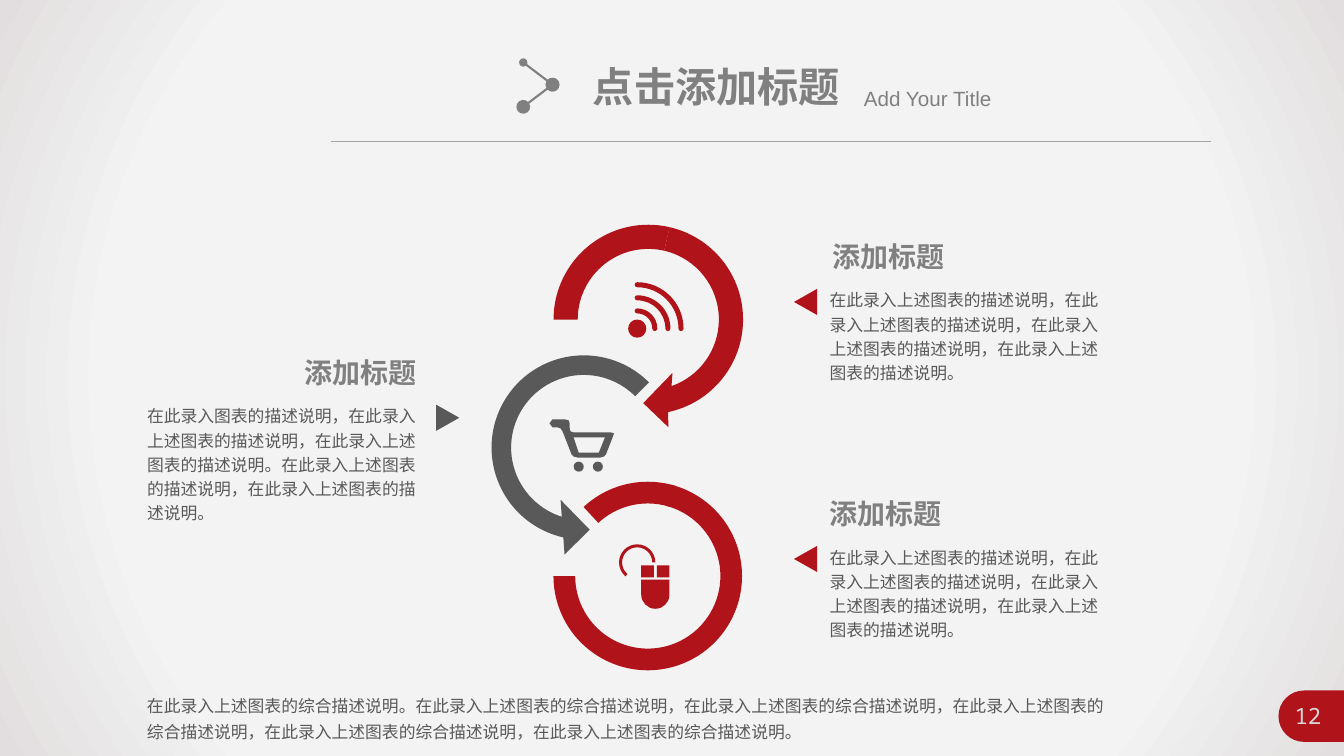
import math

from lxml import etree
from pptx import Presentation
from pptx.dml.color import RGBColor
from pptx.enum.shapes import MSO_CONNECTOR, MSO_SHAPE
from pptx.enum.text import MSO_ANCHOR, MSO_AUTO_SIZE, PP_ALIGN
from pptx.oxml import parse_xml
from pptx.oxml.ns import nsdecls, qn
from pptx.util import Inches, Pt

LEFT, CENTER, RIGHT = PP_ALIGN.LEFT, PP_ALIGN.CENTER, PP_ALIGN.RIGHT
TOP = MSO_ANCHOR.TOP
FIT, FIXED = MSO_AUTO_SIZE.SHAPE_TO_FIT_TEXT, MSO_AUTO_SIZE.NONE
STRAIGHT = MSO_CONNECTOR.STRAIGHT
RECT, TRIANGLE, OVAL = MSO_SHAPE.RECTANGLE, MSO_SHAPE.ISOSCELES_TRIANGLE, MSO_SHAPE.OVAL
BLOCK_ARC, LEFT_ARROW = MSO_SHAPE.BLOCK_ARC, MSO_SHAPE.LEFT_CIRCULAR_ARROW

W, H = 13.33, 7.5
COLORS = {"red": "B01319", "dark": "595959", "title": "808080", "rule": "A6A6A6",
          "number": "D9D9D9", "back": "F5F5F5", "middle": "F3F3F3", "edge": "E2DEDF"}
CJK, LATIN, MONO = "Noto Sans CJK SC", "Arial", "Noto Sans Mono"

HEADING = "添加标题"
RIGHT_BODY = "在此录入上述图表的描述说明，" * 3 + "在此录入上述图表的描述说明。"
LEFT_BODY = ("在此录入图表的描述说明，在此录入上述图表的描述说明，在此录入上述图表的描述说明。"
             "在此录入上述图表的描述说明，在此录入上述图表的描述说明。")
SUMMARY = "在此录入上述图表的综合描述说明。" + "在此录入上述图表的综合描述说明，" * 4 + "在此录入上述图表的综合描述说明。"


def rgb(name):
    return RGBColor.from_string(COLORS[name])


def paint(sp, color):
    sp.shadow.inherit = False
    sp.fill.solid()
    sp.fill.fore_color.rgb = rgb(color)
    sp.line.fill.background()
    return sp


def shape(s, kind, box, color, rotation=0, adjust=()):
    sp = paint(s.shapes.add_shape(kind, *map(Inches, box)), color)
    sp.rotation = rotation
    for i, value in enumerate(adjust):
        sp.adjustments[i] = value
    return sp


def corners(*points):
    return [(pt,) for pt in points]


def arc(cx, cy, radius, start, end):
    """Curved segments, split at the quadrants; degrees run clockwise from the right."""
    low, high = sorted((start, end))
    inner = [a for a in range(0, 541, 90) if low < a < high]
    stops = sorted([low, *inner, high], reverse=start > end)

    def at(angle, pull=0.0):
        c, n = math.cos(math.radians(angle)), math.sin(math.radians(angle))
        return cx + radius * (c - pull * n), cy + radius * (n + pull * c)

    segments = [(at(start),)]
    for a, b in zip(stops, stops[1:]):
        k = 4 / 3 * math.tan(math.radians(b - a) / 4)
        segments.append((at(a, k), at(b, -k), at(b)))
    return segments


def outline(s, color, *contours):
    """Fill closed contours of segments: one point is a line, three are a Bezier curve."""
    builder = None
    for contour in contours:
        (start,), *rest = contour
        x, y = map(Inches, start)
        if builder:
            builder.move_to(x, y)
        else:
            builder = s.shapes.build_freeform(x, y, scale=1.0)
        builder.add_line_segments([(Inches(px), Inches(py)) for seg in rest for px, py in seg], close=True)
    sp = paint(builder.convert_to_shape(), color)
    nodes = iter(sp._element.findall(".//" + qn("a:lnTo")))
    for seg in (seg for contour in contours for seg in contour[1:]):
        used = [next(nodes) for _ in seg]
        if len(seg) == 3:
            curve = etree.Element(qn("a:cubicBezTo"))
            used[0].addprevious(curve)
            for node in used:
                curve.append(node[0])
                node.getparent().remove(node)
    return sp


def line(s, start, end, color, width, head=None, tail=None):
    c = s.shapes.add_connector(STRAIGHT, *map(Inches, start + end))
    c.line.color.rgb = rgb(color)
    c.line.width = Pt(width)
    ln = c.line._get_or_add_ln()
    for tag, size in (("a:headEnd", head), ("a:tailEnd", tail)):
        if size:
            etree.SubElement(ln, qn(tag), type="oval", w=size, len=size)
    etree.SubElement(c._element.spPr, qn("a:effectLst"))


def write(sp, text, size, color, font=CJK, bold=False, align=LEFT, wrap=True, spacing=None, fit=FIT):
    tf = sp.text_frame
    tf.word_wrap = wrap
    tf.auto_size = fit
    tf.vertical_anchor = TOP
    p = tf.paragraphs[0]
    p.alignment = align
    if spacing:
        p.line_spacing = spacing
    r = p.add_run()
    r.text = text
    r.font.size, r.font.bold, r.font.name = Pt(size), bold, font
    r.font.color.rgb = rgb(color)
    etree.SubElement(r._r.get_or_add_rPr(), qn("a:ea"), typeface=CJK)


def textbox(s, box, text, size, color, **fmt):
    write(s.shapes.add_textbox(*map(Inches, box)), text, size, color, **fmt)


def backdrop(s):
    el = shape(s, RECT, (0, 0, W, H), "back")._element
    stops = "".join(f'<a:gs pos="{pos * 1000}"><a:srgbClr val="{COLORS[c]}"/></a:gs>'
                    for pos, c in ((0, "back"), (73, "middle"), (100, "edge")))
    el.spPr.replace(el.spPr.find(qn("a:solidFill")), parse_xml(
        f'<a:gradFill {nsdecls("a")} rotWithShape="1"><a:gsLst>{stops}</a:gsLst><a:path path="circle">'
        '<a:fillToRect l="50000" t="50000" r="50000" b="50000"/></a:path></a:gradFill>'))
    s.shapes._spTree.insert(2, el)


def header(s, x, y):
    line(s, (3.28, 1.4), (12.01, 1.4), "rule", 0.5)
    title = s.shapes.title
    title.left, title.top, title.width, title.height = map(Inches, (x + 0.59, y - 0.06, 2.67, 0.59))
    write(title, "点击添加标题", 29.4, "title", font=LATIN, bold=True, wrap=False, fit=FIXED)
    textbox(s, (x + 3.28, y + 0.18, 2.52, 0.35), "Add Your Title", 14.7, "title", font=LATIN)
    g = s.shapes.add_group_shape()
    first, middle, last = (x, y), (x + 0.29, y + 0.22), (x, y + 0.44)
    line(g, first, middle, "title", 1.5, head="med", tail="lg")
    line(g, middle, last, "title", 1.5, head="lg", tail="lg")


def page_number(s, number):
    top, height, right = 6.85, 0.51, W + 0.16
    r = height / 2
    outline(s, "red", arc(12.68 + r, top + r, r, 90, 270) + corners((right, top), (right, top + height)))
    textbox(s, (12.71, 6.92, 0.66, 0.37), f"{number} ", 16, "number", font=MONO, align=CENTER)


def callout(s, x, y, width, body, color, points_left, indent=0.0):
    """Heading over body text, with a triangle on the side facing the rings."""
    hx = x + indent if points_left else x + width - 1.37
    tx = x - 0.27 if points_left else x + width + 0.03
    textbox(s, (hx, y, 1.32, 0.44), HEADING, 20, "title", bold=True, wrap=False,
            align=LEFT if points_left else RIGHT)
    shape(s, TRIANGLE, (tx, y + 0.55, 0.26, 0.23), color, rotation=270 if points_left else 90)
    textbox(s, (x, y + 0.46, width, 1.07), body, 12, "dark", spacing=1.2)


def rings(s):
    cx, cy, outer, inner = 6.43, 3.17, 0.94, 0.7
    head = corners((6.63, 4.24), (6.38, 4), (6.67, 3.7), (6.66, 3.84))
    outline(s, "red", arc(cx, cy, outer, 283, 438) + head + arc(cx, cy, inner, 431, 283))
    outline(s, "red", arc(cx, cy, outer, 180, 283) + arc(cx, cy, inner, 283, 180))
    shape(s, LEFT_ARROW, (4.7, 3.35, 2.18, 2.18), "dark", adjust=(0.089, 11.423, 62.936, 189, 0.125))
    for start, end in ((136.244, 172.282), (170.851, 108)):
        shape(s, BLOCK_ARC, (5.49, 4.78, 1.87, 1.87), "red", adjust=(start, end, 0.115))


def signal_icon(s, cx, cy):
    dot, cap = 0.09, 0.025
    for mid in (0.175, 0.305, 0.435):
        outline(s, "red", arc(cx, cy, mid + cap, 270, 360) + arc(cx + mid, cy, cap, 0, 180)[1:]
                + arc(cx, cy, mid - cap, 360, 270)[1:] + arc(cx, cy - mid, cap, 90, 270)[1:])
    outline(s, "red", arc(cx, cy, dot, 0, 360))


def cart_icon(s, x, y):
    for dx in (0.24, 0.43):
        shape(s, OVAL, (x + dx, y + 0.42, 0.1, 0.1), "dark")
    body = [(0.03, 0), (0.15, 0), (0.19, 0.01), (0.2, 0.04), (0.2, 0.09), (0.21, 0.12), (0.24, 0.13),
            (0.61, 0.13), (0.64, 0.14), (0.63, 0.17), (0.56, 0.35), (0.54, 0.37), (0.5, 0.38),
            (0.28, 0.38), (0.24, 0.37), (0.22, 0.35), (0.13, 0.12), (0.11, 0.09), (0.08, 0.08),
            (0.03, 0.08), (0, 0.04)]
    basket = [(0.49, 0.33), (0.29, 0.33), (0.24, 0.18), (0.55, 0.18)]
    outline(s, "dark", *(corners(*((x + dx, y + dy) for dx, dy in c)) for c in (body, basket)))


def mouse_icon(s, x, y):
    width, gap, button = 0.28, 0.03, 0.12
    r, half = width / 2, (width - gap) / 2
    buttons = [corners((bx, y), (bx + half, y), (bx + half, y + button), (bx, y + button))
               for bx in (x, x + half + gap)]
    shell = corners((x, y + 0.14), (x + width, y + 0.14)) + arc(x + r, y + 0.29, r, 0, 180)
    outline(s, "red", *buttons, shell)
    cx, cy = x - 0.04, y - 0.03
    outline(s, "red", arc(cx, cy, 0.18, 130, 360) + arc(cx, cy, 0.15, 360, 130))


def main():
    prs = Presentation()
    prs.slide_width, prs.slide_height = Inches(W), Inches(H)
    s = prs.slides.add_slide(prs.slide_layouts[5])
    backdrop(s)
    page_number(s, 12)
    rings(s)
    callout(s, 8.13, 2.33, 3.01, RIGHT_BODY, "red", True, indent=0.03)
    callout(s, 8.13, 4.88, 3.01, RIGHT_BODY, "red", True)
    callout(s, 1.36, 3.48, 2.92, LEFT_BODY, "dark", False)
    textbox(s, (1.36, 6.79, 9.77, 0.63), SUMMARY, 12, "dark", spacing=1.3)
    for icon, x, y in ((signal_icon, 6.32, 3.26), (cart_icon, 5.45, 4.16), (mouse_icon, 6.36, 5.61)):
        icon(s.shapes.add_group_shape(), x, y)
    header(s, 5.19, 0.62)
    prs.save("out.pptx")


if __name__ == "__main__":
    main()
